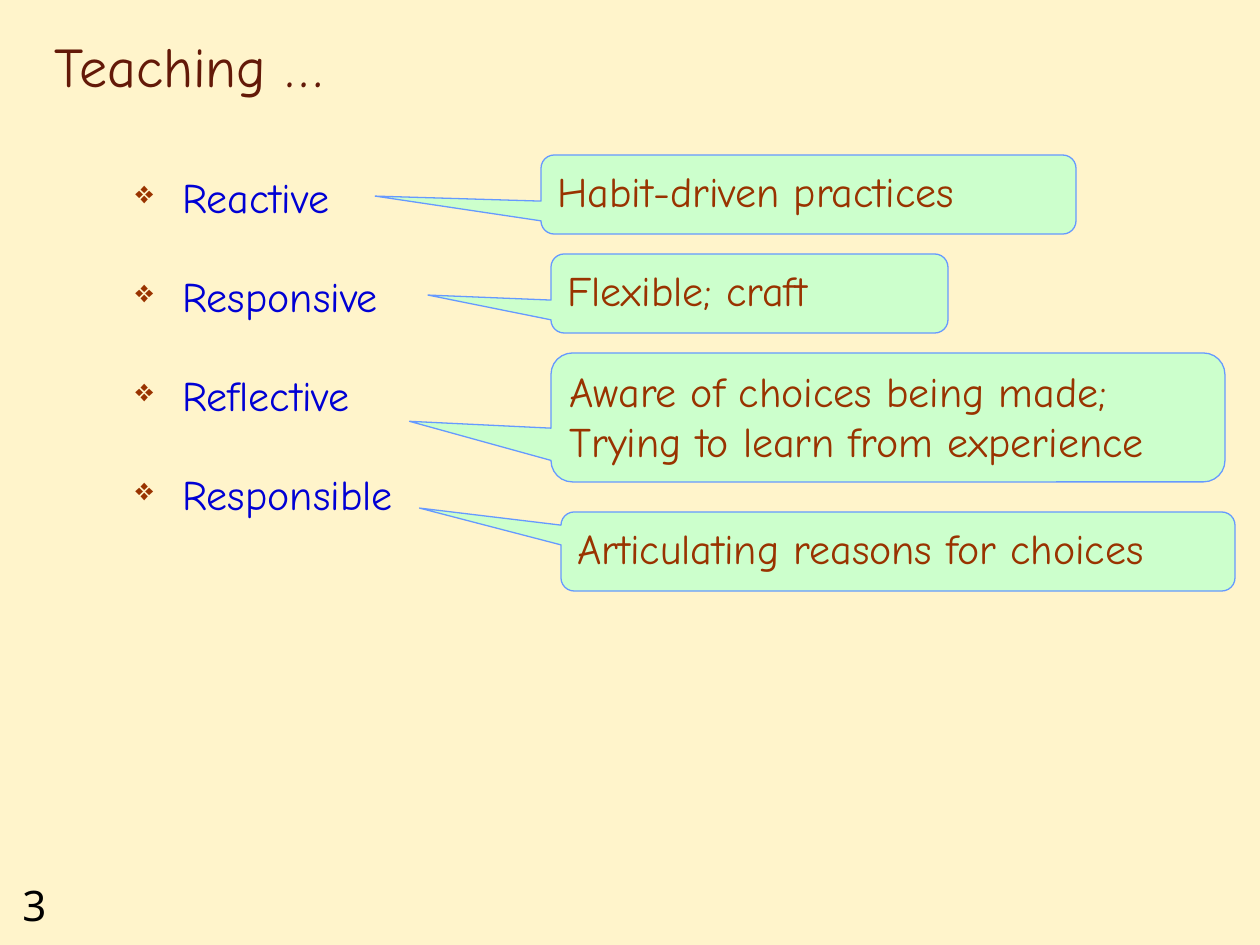
"""Build the Teaching slide: four bulleted words, each with a callout."""
import pptx
import pptx.dml.color
import pptx.enum.shapes
import pptx.enum.text
import pptx.oxml.ns
import pptx.util
from lxml import etree

COLORS = {
    "background": "FFF2C0",
    "title": "631908",
    "word": "0000D4",
    "bullet": "993300",
    "note": "993300",
    "callout": "CCFFCC",
    "outline": "6699FF",
    "number": "000000",
}
FONT = "Comic Neue"
ROW_TOP, ROW_PITCH = 165, 99
ROWS = [
    ("Reactive", 246, (541, 155, 535, 79), (-0.81, 0.02), "Habit-driven practices"),
    ("Responsive", 297, (551, 254, 397, 79), (-0.81, 0.02), "Flexible; craft"),
    ("Reflective", 290, (551, 353, 674, 129), (-0.71, 0.03),
     "Aware of choices being made;\nTrying to learn from experience"),
    ("Responsible", 297, (561, 512, 674, 79), (-0.71, -0.55),
     "Articulating reasons for choices"),
]


def px(n):
    return pptx.util.Emu(round(n * 914400 / 126))


def rgb(name):
    return pptx.dml.color.RGBColor.from_string(COLORS[name])


def add_xml(parent, tag, **attrs):
    return etree.SubElement(parent, pptx.oxml.ns.qn(tag), attrs)


class Deck:
    def __init__(self):
        self.prs = pptx.Presentation()
        self.prs.slide_width, self.prs.slide_height = px(1260), px(945)
        self.s = self.prs.slides.add_slide(self.prs.slide_layouts[6])

    def background(self, alpha):
        fill = self.s.background.fill
        fill.solid()
        fill.fore_color.rgb = rgb("background")
        for color in self.s.element.iter(pptx.oxml.ns.qn("a:srgbClr")):
            add_xml(color, "a:alpha", val=str(alpha * 1000))

    def style_text(self, sp, text, color, size=24, font=FONT, anchor="TOP"):
        tf = sp.text_frame
        tf.word_wrap = True
        tf.vertical_anchor = pptx.enum.text.MSO_ANCHOR[anchor]
        tf.text = text
        for p in tf.paragraphs:
            p.alignment = pptx.enum.text.PP_ALIGN.LEFT
            for r in p.runs:
                r.font.size = pptx.util.Pt(size)
                r.font.name = font
                r.font.color.rgb = rgb(color)
        return tf

    def text(self, box, text, color, **style):
        sp = self.s.shapes.add_textbox(*map(px, box))
        return self.style_text(sp, text, color, **style)

    def bullet(self, box, text):
        tf = self.text(box, text, "word")
        pPr = tf.paragraphs[0]._p.get_or_add_pPr()
        pPr.set("marL", str(px(47)))
        pPr.set("indent", str(-px(47)))
        add_xml(add_xml(pPr, "a:buClr"), "a:srgbClr", val=COLORS["bullet"])
        add_xml(pPr, "a:buSzPct", val="75000")
        add_xml(pPr, "a:buChar", char="❖")

    def callout(self, box, tip, text):
        kind = pptx.enum.shapes.MSO_SHAPE.ROUNDED_RECTANGULAR_CALLOUT
        sp = self.s.shapes.add_shape(kind, *map(px, box))
        sp.shadow.inherit = False
        sp.adjustments[0], sp.adjustments[1] = tip
        sp.fill.solid()
        sp.fill.fore_color.rgb = rgb("callout")
        sp.line.color.rgb = rgb("outline")
        sp.line.width = pptx.util.Pt(0.75)
        self.style_text(sp, text, "note")


def main():
    deck = Deck()
    deck.background(82)
    deck.text((10, 873, 95, 63), "3", "number", font="Noto Sans")
    deck.text((42, 21, 1071, 84), "Teaching …", "title", size=32, anchor="BOTTOM")
    for i, (word, width, box, tip, note) in enumerate(ROWS):
        deck.bullet((123, ROW_TOP + i * ROW_PITCH, width, 86), word)
        deck.callout(box, tip, note)
    deck.prs.save("out.pptx")


if __name__ == "__main__":
    main()
